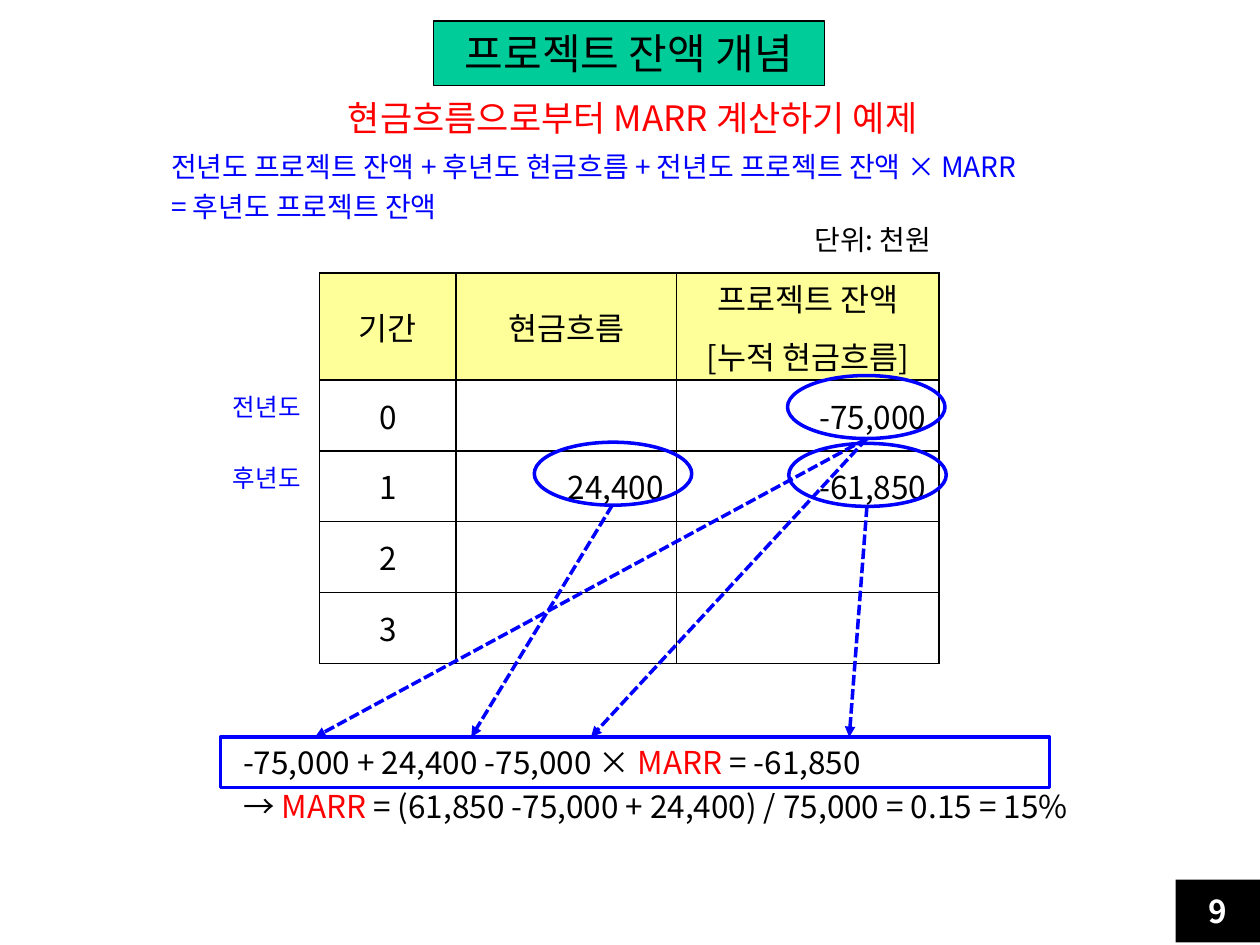
from pptx import Presentation
from pptx.dml.color import RGBColor
from pptx.enum.dml import MSO_LINE
from pptx.enum.shapes import MSO_CONNECTOR, MSO_SHAPE
from pptx.enum.text import MSO_ANCHOR, PP_ALIGN
from pptx.oxml.ns import qn
from pptx.util import Pt
from lxml.etree import SubElement

FONT = "Noto Sans CJK KR"
COLORS = {"black": "000000", "white": "FFFFFF", "red": "FF0000",
          "blue": "0000FF", "green": "00CC99", "yellow": "FFFF99"}


def color(name):
    return RGBColor.from_string(COLORS[name])


def write(text_frame, paragraphs, size, align, before=0, bold=False):
    """Fill a text frame; each paragraph is a list of (text, colour name)."""
    for index, parts in enumerate(paragraphs):
        paragraph = text_frame.paragraphs[0] if index == 0 else text_frame.add_paragraph()
        paragraph.alignment = align
        paragraph.space_before = Pt(before if index else 0)
        for text, name in parts:
            run = paragraph.add_run()
            run.text = text
            run.font.size = Pt(size)
            run.font.bold = bold
            run.font.name = FONT
            run.font.color.rgb = color(name)
            SubElement(run.font._element, qn("a:ea"), typeface=FONT)


presentation = Presentation()
presentation.slide_width, presentation.slide_height = Pt(720), Pt(540)
slide = presentation.slides.add_slide(presentation.slide_layouts[6])
shapes = slide.shapes

# Filled boxes: title and page number
boxes = [
    ("프로젝트 잔액 개념", (247.7, 12, 223.3, 36.8), "green", "black", "black", 24, False),
    ("9", (671.8, 502.6, 48.2, 36), "black", None, "white", 18, True),
]
for text, frame, fill, outline, font_color, size, bold in boxes:
    box = shapes.add_shape(MSO_SHAPE.RECTANGLE, *map(Pt, frame))
    box.shadow.inherit = False
    box.fill.solid()
    box.fill.fore_color.rgb = color(fill)
    if outline:
        box.line.color.rgb = color(outline)
        box.line.width = Pt(0.75)
    else:
        box.line.fill.background()
    box.text_frame.vertical_anchor = MSO_ANCHOR.MIDDLE
    write(box.text_frame, [[(text, font_color)]], size, PP_ALIGN.CENTER, bold=bold)

# Cash flow table
rows = [
    ("기간", "현금흐름", "프로젝트 잔액\n[누적 현금흐름]"),
    ("0", "", "-75,000"),
    ("1", "24,400", "-61,850"),
    ("2", "", ""),
    ("3", "", ""),
]
widths = (78, 126, 150)
heights = (54.7,) + (40.5,) * 4
table = shapes.add_table(5, 3, Pt(182.6), Pt(156), Pt(sum(widths)), Pt(sum(heights))).table
table.first_row = table.horz_banding = False
for column, width in zip(table.columns, widths):
    column.width = Pt(width)
for row_index, (texts, height) in enumerate(zip(rows, heights)):
    table.rows[row_index].height = Pt(height)
    for column_index, text in enumerate(texts):
        cell = table.cell(row_index, column_index)
        cell.vertical_anchor = MSO_ANCHOR.MIDDLE
        cell.margin_top = cell.margin_bottom = Pt(1)
        is_header = row_index == 0
        centered = is_header or column_index == 0
        if text:
            write(cell.text_frame, [[(line, "black")] for line in text.split("\n")], 18,
                  PP_ALIGN.CENTER if centered else PP_ALIGN.RIGHT, before=7)
        properties = cell._tc.get_or_add_tcPr()
        for side in ("a:lnL", "a:lnR", "a:lnT", "a:lnB"):
            border = SubElement(properties, qn(side), w=str(Pt(1)))
            solid = SubElement(border, qn("a:solidFill"))
            SubElement(solid, qn("a:srgbClr"), val=COLORS["black"])
        if is_header:
            cell.fill.solid()
            cell.fill.fore_color.rgb = color("yellow")
        else:
            cell.fill.background()

# Text boxes: frame, paragraphs, size, alignment, left indent, wrap
texts = [
    ((431.3, 123.8, 108, 26.6), [[("단위: 천원", "black")]], 16, PP_ALIGN.RIGHT, 0, True),
    ((160.6, 51.8, 401.8, 31.7), [[("현금흐름으로부터 MARR 계산하기 예제", "red")]],
     20, PP_ALIGN.CENTER, 0, True),
    ((48.2, 82.1, 640.8, 49.7),
     [[("전년도 프로젝트 잔액 + 후년도 현금흐름 + 전년도 프로젝트 잔액 × MARR", "blue")],
      [("= 후년도 프로젝트 잔액", "blue")]], 16, PP_ALIGN.LEFT, 42.5, True),
    ((126, 220.3, 56.9, 24.5), [[("전년도", "blue")]], 14, PP_ALIGN.LEFT, 0, False),
    ((126, 260.8, 56.9, 24.5), [[("후년도", "blue")]], 14, PP_ALIGN.LEFT, 0, False),
    ((131.8, 421.2, 540, 55.4),
     [[("-75,000 + 24,400 -75,000 × ", "black"), ("MARR ", "red"), ("= -61,850", "black")],
      [("→ ", "black"), ("MARR", "red"),
       (" = (61,850 -75,000 + 24,400) / 75,000 = 0.15 = 15%", "black")]],
     18, PP_ALIGN.JUSTIFY, 0, True),
]
for frame, paragraphs, size, align, indent, wrap in texts:
    text_frame = shapes.add_textbox(*map(Pt, frame)).text_frame
    text_frame.word_wrap = wrap
    write(text_frame, paragraphs, size, align, before=size * 0.2)
    for paragraph in text_frame.paragraphs:
        if indent:
            paragraph._p.get_or_add_pPr().set("marL", str(Pt(indent)))

# Blue outlines around the linked values and the equation
outlines = [
    (MSO_SHAPE.OVAL, (450, 214.6, 90, 36)),
    (MSO_SHAPE.OVAL, (450.7, 253.4, 90, 36)),
    (MSO_SHAPE.OVAL, (305.3, 252.7, 90, 36)),
    (MSO_SHAPE.RECTANGLE, (126, 421.2, 473.8, 28.8)),
]
for kind, frame in outlines:
    outline = shapes.add_shape(kind, *map(Pt, frame))
    outline.shadow.inherit = False
    outline.fill.background()
    outline.line.color.rgb = color("blue")
    outline.line.width = Pt(2)

# Dashed arrows from the values down to the equation
arrows = [(495.4, 289.4, 485.3), (495.4, 250.6, 180), (349.9, 288.7, 269.3), (495.4, 250.6, 337.7)]
for start_x, start_y, end_x in arrows:
    arrow = shapes.add_connector(MSO_CONNECTOR.STRAIGHT, Pt(start_x), Pt(start_y),
                                 Pt(end_x), Pt(421.2))
    arrow.line.color.rgb = color("blue")
    arrow.line.width = Pt(2)
    arrow.line.dash_style = MSO_LINE.SQUARE_DOT
    SubElement(arrow.line._get_or_add_ln(), qn("a:tailEnd"), type="triangle")
    SubElement(arrow._element.spPr, qn("a:effectLst"))

presentation.save("out.pptx")
